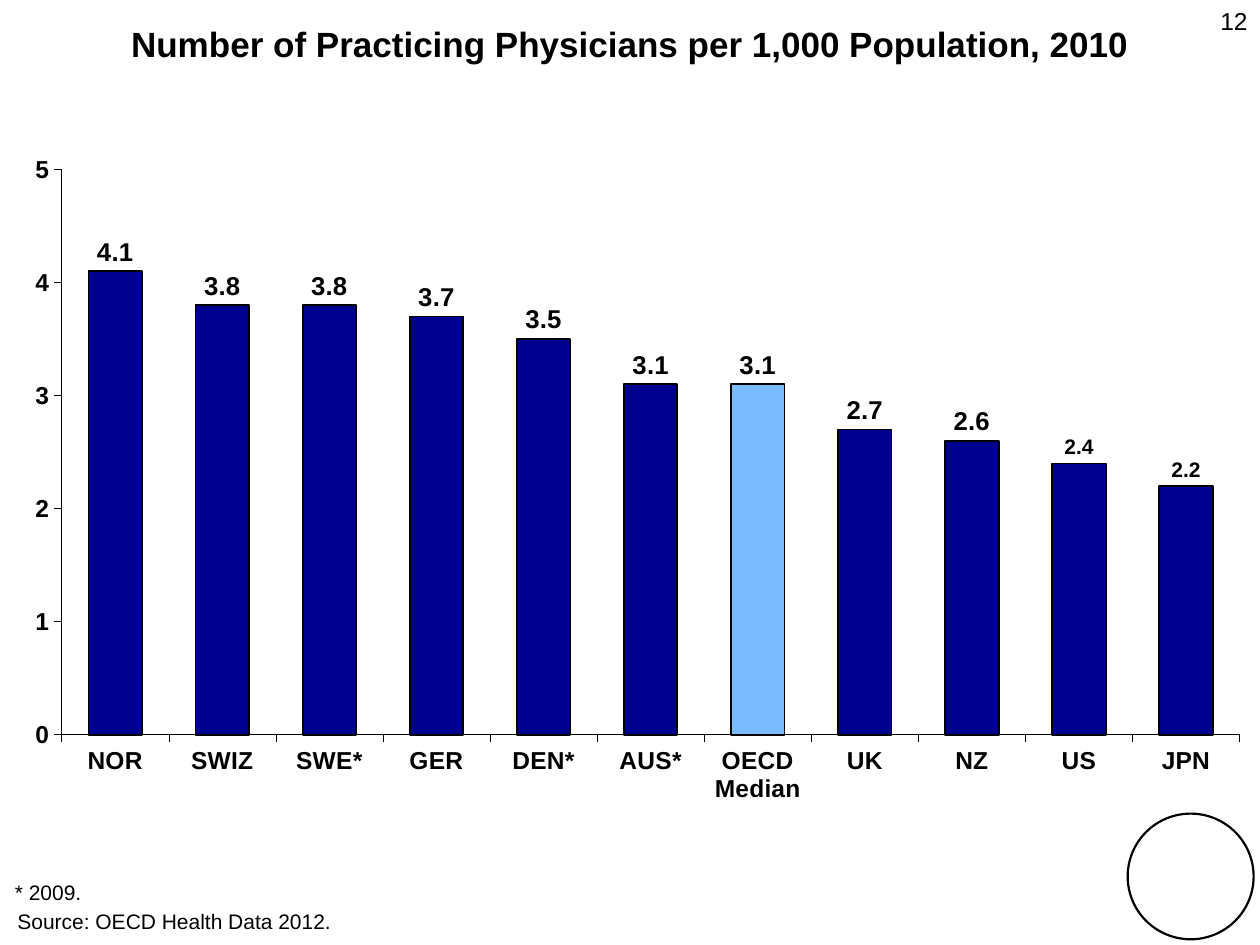
from typing import NamedTuple

from lxml.etree import SubElement
from pptx import Presentation
from pptx.chart.chart import Chart
from pptx.chart.data import CategoryChartData
from pptx.dml.color import RGBColor
from pptx.enum.chart import XL_CHART_TYPE as Kind
from pptx.enum.chart import XL_LABEL_POSITION as Spot
from pptx.enum.chart import XL_TICK_MARK as Tick
from pptx.enum.shapes import MSO_SHAPE as Form
from pptx.enum.text import MSO_ANCHOR as Anchor
from pptx.enum.text import PP_ALIGN as Align
from pptx.oxml.ns import qn
from pptx.util import Inches, Pt

WIDE, HIGH = Inches(10), Inches(7.5)
COLORS = {"ink": "000000", "bar": "000090", "median": "7ABAFF"}


class Box(NamedTuple):
    """A place given as shares of the slide's width and height."""
    x: float
    y: float
    w: float
    h: float

    def spans(self) -> tuple[int, int, int, int]:
        return (int(self.x * WIDE), int(self.y * HIGH),
                int(self.w * WIDE), int(self.h * HIGH))


class Note(NamedTuple):
    text: str
    box: Box
    size: float
    align: Align = Align.LEFT
    wrap: bool = True


class Rate(NamedTuple):
    land: str
    value: float
    size: float = 14.7
    fill: str = "bar"


RATES = [
    Rate("NOR", 4.1), Rate("SWIZ", 3.8), Rate("SWE*", 3.8),
    Rate("GER", 3.7), Rate("DEN*", 3.5), Rate("AUS*", 3.1),
    Rate("OECD Median", 3.1, fill="median"),
    Rate("UK", 2.7), Rate("NZ", 2.6),
    Rate("US", 2.4, size=12), Rate("JPN", 2.2, size=12),
]
NOTES = [
    Note("* 2009.", Box(0.002, 0.924, 0.073, 0.04), 12, wrap=False),
    Note("Source: OECD Health Data 2012.", Box(0.004, 0.955, 0.406, 0.04), 12),
    Note("12", Box(0.767, 0, 0.233, 0.07), 14, Align.RIGHT),
]
TITLE = Box(0, 0.013, 1, 0.067)
CHART = Box(0.017, 0.136, 0.967, 0.725)
PLOT = Box(0.034, 0.06, 0.967, 0.825)
BADGE = Box(0.895, 0.861, 0.1, 0.133)


def color(name: str) -> RGBColor:
    return RGBColor.from_string(COLORS[name])


def style(font, size: float, bold: bool = False) -> None:
    font.name, font.size, font.bold = "Arial", Pt(size), bold
    font.color.rgb = color("ink")


def outline(line, width: float) -> None:
    line.color.rgb = color("ink")
    line.width = Pt(width)


def add_title(slide, text: str) -> None:
    title = slide.shapes.title
    title.left, title.top, title.width, title.height = TITLE.spans()
    frame = title.text_frame
    frame.text = text
    frame.vertical_anchor = Anchor.MIDDLE
    frame.paragraphs[0].alignment = Align.CENTER
    style(frame.paragraphs[0].font, 20, True)


def add_note(slide, note: Note) -> None:
    frame = slide.shapes.add_textbox(*note.box.spans()).text_frame
    frame.word_wrap = note.wrap
    frame.text = note.text
    frame.paragraphs[0].alignment = note.align
    style(frame.paragraphs[0].font, note.size)


def place_plot(chart: Chart, box: Box) -> None:
    """Fix the inner plot area at shares of the chart's size."""
    area = chart._chartSpace.chart.plotArea
    for old in area.findall(qn("c:layout")):
        area.remove(old)
    layout = SubElement(area, qn("c:layout"))
    area.insert(0, layout)
    manual = SubElement(layout, qn("c:manualLayout"))
    parts = {"layoutTarget": "inner", "xMode": "edge", "yMode": "edge",
             **box._asdict()}
    for tag, value in parts.items():
        SubElement(manual, qn(f"c:{tag}")).set("val", str(value))


def set_axes(chart: Chart) -> None:
    for axis in (chart.category_axis, chart.value_axis):
        axis.has_major_gridlines = False
        axis.major_tick_mark = Tick.OUTSIDE
        axis.minor_tick_mark = Tick.NONE
        style(axis.tick_labels.font, 14, True)
        outline(axis.format.line, 0.25)
    axis = chart.value_axis
    axis.minimum_scale, axis.maximum_scale, axis.major_unit = 0, 5, 1
    axis.tick_labels.number_format = "#,##0"
    axis.tick_labels.number_format_is_linked = False


def set_bars(chart: Chart) -> None:
    plot = chart.plots[0]
    plot.gap_width, plot.vary_by_categories = 100, False
    bars = plot.series[0]
    bars.format.fill.solid()
    bars.format.fill.fore_color.rgb = color("bar")
    outline(bars.format.line, 1.05)
    labels = bars.data_labels
    labels.show_value = True
    labels.position = Spot.OUTSIDE_END
    labels.number_format = "#,##0.0"
    labels.number_format_is_linked = False
    style(labels.font, 14.7, True)
    for i, rate in enumerate(RATES):
        if rate.fill != "bar":
            look = bars.points[i].format
            look.fill.solid()
            look.fill.fore_color.rgb = color(rate.fill)
            outline(look.line, 1.05)
        if rate.size != 14.7:
            label = bars.points[i].data_label
            style(label.font, rate.size, True)
            label.position = Spot.OUTSIDE_END


def add_rates(slide) -> None:
    data = CategoryChartData(number_format="#,##0.0")
    data.categories = [rate.land for rate in RATES]
    data.add_series("Series 1", [rate.value for rate in RATES])
    chart = slide.shapes.add_chart(
        Kind.COLUMN_CLUSTERED, *CHART.spans(), data).chart
    chart.has_legend = chart.has_title = False
    style(chart.font, 13.7)
    place_plot(chart, PLOT)
    set_axes(chart)
    set_bars(chart)


def add_badge(slide) -> None:
    badge = slide.shapes.add_shape(Form.OVAL, *BADGE.spans())
    badge.shadow.inherit = False
    badge.fill.background()
    outline(badge.line, 1.25)


def main() -> None:
    deck = Presentation()
    deck.slide_width, deck.slide_height = WIDE, HIGH
    slide = deck.slides.add_slide(deck.slide_layouts[5])
    add_title(slide, "Number of Practicing Physicians per 1,000 Population, 2010")
    add_rates(slide)
    for note in NOTES:
        add_note(slide, note)
    add_badge(slide)
    deck.save("out.pptx")


if __name__ == "__main__":
    main()
